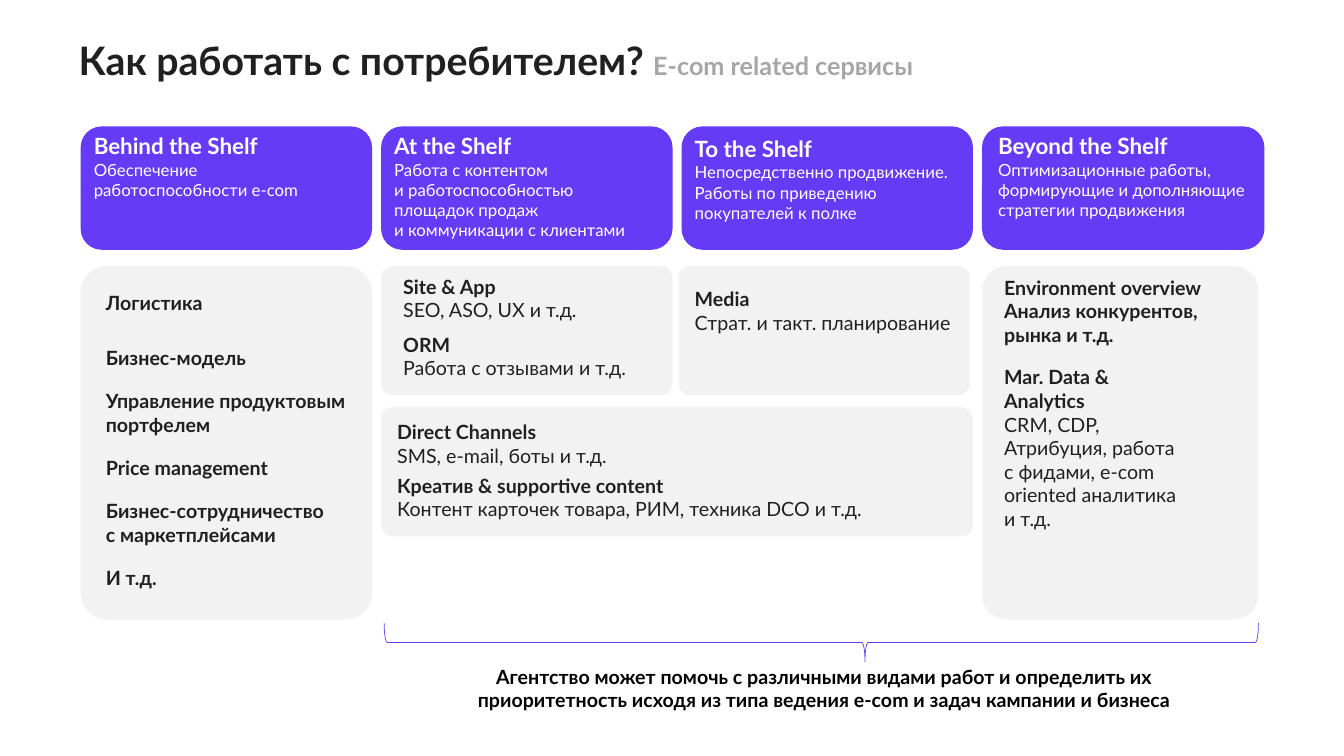
from dataclasses import dataclass

from pptx import Presentation
from pptx.dml.color import RGBColor
from pptx.enum.shapes import MSO_SHAPE
from pptx.enum.text import MSO_ANCHOR, MSO_AUTO_SIZE, PP_ALIGN
from pptx.util import Inches, Pt


@dataclass(frozen=True)
class Theme:
    font: str = "Lato"
    violet: str = "653BF5"
    panel: str = "F2F2F2"
    ink: str = "202020"
    muted: str = "A6A6A6"
    white: str = "FFFFFF"
    black: str = "000000"
    title: int = 28
    subtitle: int = 18
    heading: int = 16
    body: int = 14
    detail: int = 12


@dataclass(frozen=True)
class Grid:
    left: float = 0.8
    top: float = 2.64
    column: float = 2.98
    row: float = 1.4
    column_gap: float = 0.09
    row_gap: float = 0.12

    def box(self, col, row, cols, rows):
        """Left, top, width and height of a span of cells; row 0 is the first below the headers."""
        return (Inches(self.left + col * self.column),
                Inches(self.top + row * self.row),
                Inches(cols * self.column - self.column_gap),
                Inches(rows * self.row - self.row_gap))


def write(paragraph, text, *, font, size, color, bold=False):
    run = paragraph.add_run()
    run.text = text
    run.font.name = font
    run.font.size = Pt(size)
    run.font.bold = bold
    run.font.color.rgb = RGBColor.from_string(color)


class Sheet:
    def __init__(self, slide, theme, grid):
        self.slide, self.theme, self.grid = slide, theme, grid

    def title(self, heading, subtitle):
        theme = self.theme
        holder = self.slide.shapes.title
        holder.left, holder.top, holder.width, holder.height = self.grid.box(-0.04, -1.63, 3.8, 0.46)
        frame = holder.text_frame
        frame.auto_size = MSO_AUTO_SIZE.NONE
        frame.vertical_anchor = MSO_ANCHOR.TOP
        paragraph = frame.paragraphs[0]
        paragraph.alignment = PP_ALIGN.LEFT
        paragraph.line_spacing = 0.9
        write(paragraph, heading + " ", font=theme.font, size=theme.title, color=theme.ink, bold=True)
        write(paragraph, subtitle, font=theme.font, size=theme.subtitle, color=theme.muted, bold=True)

    def card(self, col, row, cols, rows, fill, corner):
        card = self.slide.shapes.add_shape(MSO_SHAPE.ROUNDED_RECTANGLE, *self.grid.box(col, row, cols, rows))
        card.adjustments[0] = corner
        card.shadow.inherit = False
        card.fill.solid()
        card.fill.fore_color.rgb = RGBColor.from_string(fill)
        card.line.fill.background()

    def label(self, col, row, cols, rows, bold_lines, plain_lines=(), *, size, color,
              plain_size=None, anchor=MSO_ANCHOR.MIDDLE, align=PP_ALIGN.LEFT, inset=0.05):
        """Place bold lines, then plain ones, each as a paragraph."""
        frame = self.slide.shapes.add_textbox(*self.grid.box(col, row, cols, rows)).text_frame
        frame.word_wrap = True
        frame.vertical_anchor = anchor
        frame.margin_left = frame.margin_right = Inches(0.13)
        frame.margin_top = frame.margin_bottom = Inches(inset)
        lines = [(line, True) for line in bold_lines] + [(line, False) for line in plain_lines]
        for index, (line, bold) in enumerate(lines):
            paragraph = frame.add_paragraph() if index else frame.paragraphs[0]
            paragraph.alignment = align
            write(paragraph, line, font=self.theme.font, color=color, bold=bold,
                  size=size if bold else plain_size or size)

    def header(self, col, width, text_col, text_row, text_width, heading, details):
        theme = self.theme
        self.card(col, -0.99, width, 0.96, theme.violet, 0.17)
        self.label(text_col, text_row, text_width, 0.99, [heading], details, size=theme.heading,
                   plain_size=theme.detail, color=theme.white, anchor=MSO_ANCHOR.TOP, inset=0.13)

    def brace(self, col, row, cols, rows):
        """Draw a brace that opens upwards: a right brace turned by a quarter."""
        left, top, width, height = self.grid.box(col, row, cols, rows)
        shift = (width - height) // 2
        brace = self.slide.shapes.add_shape(MSO_SHAPE.RIGHT_BRACE, left + shift, top - shift, height, width)
        brace.rotation = 90
        brace.adjustments[0], brace.adjustments[1] = 0.08, 0.45
        brace.shadow.inherit = False
        brace.fill.background()
        brace.line.color.rgb = RGBColor.from_string(self.theme.violet)
        brace.line.width = Pt(0.5)


HEADERS = [
    # column, width, text column, text row, text width, heading, details
    (0, 1, 0, -1.04, 0.87, "Behind the Shelf", ["Обеспечение работоспособности e-com"]),
    (1, 1, 1, -1.04, 0.97, "At the Shelf",
     ["Работа с контентом", "и работоспособностью", "площадок продаж", "и коммуникации с клиентами"]),
    (2, 1, 2, -1.02, 1, "To the Shelf",
     ["Непосредственно продвижение. Работы по приведению покупателей к полке"]),
    (3, 0.97, 3.01, -1.04, 0.96, "Beyond the Shelf",
     ["Оптимизационные работы, формирующие и дополняющие стратегии продвижения"]),
]
PANELS = [(0, 0, 1, 2.59), (1, 0, 1, 1), (1.99, 0, 1, 1), (1, 1, 2, 1), (3, 0, 0.95, 2.59)]
BEHIND_SHELF = [
    ["Логистика"],
    ["Бизнес-модель"],
    ["Управление продуктовым портфелем"],
    ["Price management"],
    ["Бизнес-сотрудничество", "с маркетплейсами"],
    ["И т.д."],
]
SERVICES = [
    # column, row, columns, rows, bold lines, plain lines
    (1.03, 0.05, 1, 0.44, ["Site & App"], ["SEO, ASO, UX и т.д."]),
    (1.03, 0.46, 1, 0.44, ["ORM"], ["Работа с отзывами и т.д."]),
    (2, 0.14, 1, 0.44, ["Media"], ["Страт. и такт. планирование"]),
    (1.01, 1.08, 2, 0.44, ["Direct Channels"], ["SMS, e-mail, боты и т.д."]),
    (1.01, 1.46, 2, 0.44, ["Креатив & supportive content"],
     ["Контент карточек товара, РИМ, техника DCO и т.д."]),
    (3.03, 0.14, 0.9, 0.44, ["Environment overview", "Анализ конкурентов, рынка и т.д."], []),
    (3.03, 1.02, 0.71, 0.62, ["Mar. Data & Analytics"],
     ["CRM, CDP, Атрибуция, работа с фидами, e-com oriented аналитика и т.д."]),
]
CONCLUSION = ("Агентство может помочь с различными видами работ и определить их "
              "приоритетность исходя из типа ведения e-com и задач кампании и бизнеса")


def main():
    deck = Presentation()
    deck.slide_width, deck.slide_height = Inches(13.33), Inches(7.5)
    theme = Theme()
    sheet = Sheet(deck.slides.add_slide(deck.slide_layouts[5]), theme, Grid())

    sheet.title("Как работать с потребителем?", "E-com related сервисы")
    for header in HEADERS:
        sheet.header(*header)
    for panel in PANELS:
        sheet.card(*panel, theme.panel, 0.09)
    for index, lines in enumerate(BEHIND_SHELF):
        sheet.label(0.04, 0.08 + 0.39 * index, 1, 0.44, lines, size=theme.body, color=theme.ink)
    for service in SERVICES:
        sheet.label(*service, size=theme.body, color=theme.ink)
    sheet.brace(1.01, 2.53, 2.94, 0.36)
    sheet.label(1.16, 2.79, 2.66, 0.49, [CONCLUSION], size=theme.body, color=theme.black,
                anchor=MSO_ANCHOR.TOP, align=PP_ALIGN.CENTER)
    deck.save("out.pptx")


if __name__ == "__main__":
    main()
